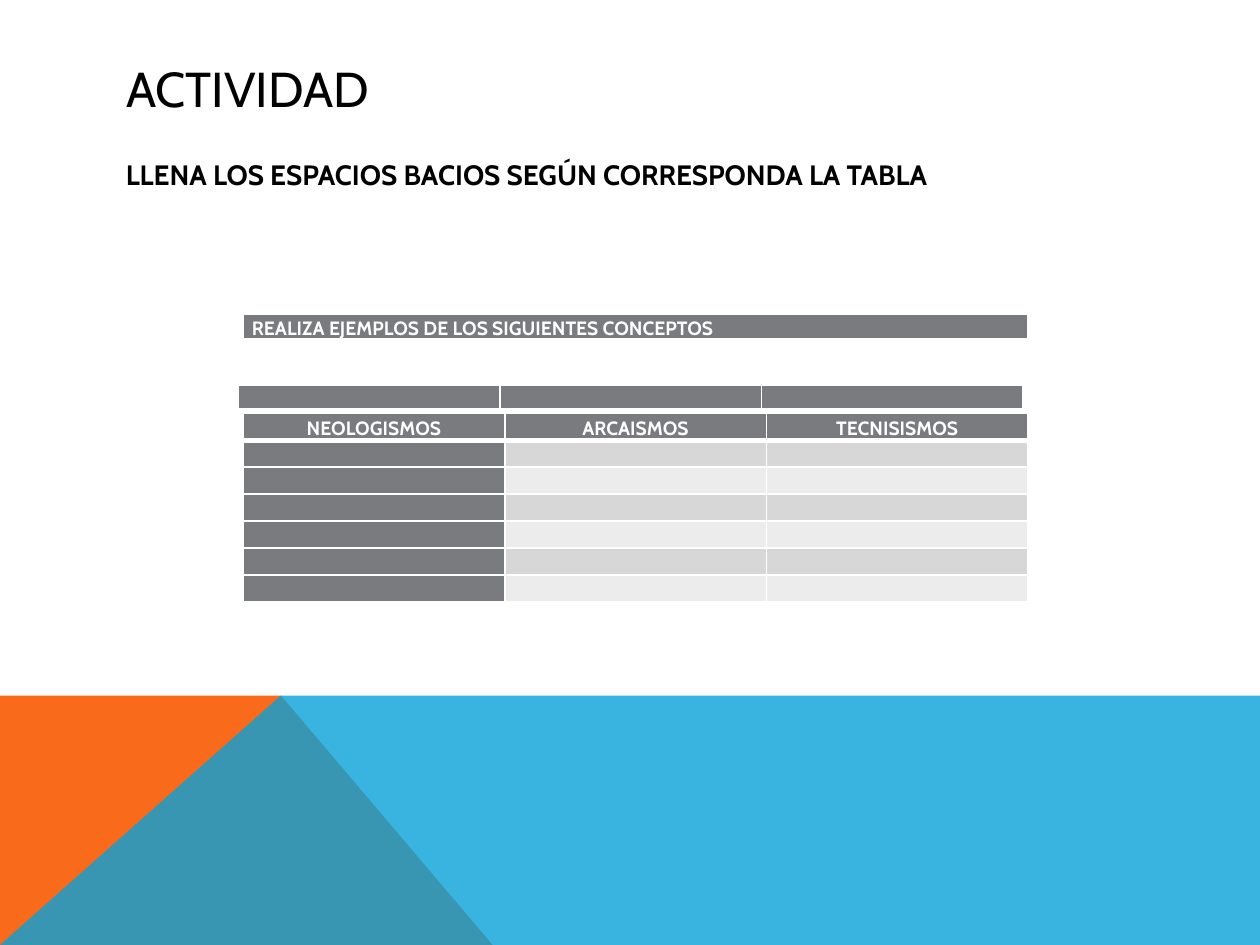
from lxml import etree
from pptx import Presentation
from pptx.dml.color import RGBColor
from pptx.enum.text import MSO_ANCHOR as Anchor, PP_ALIGN as Align
from pptx.oxml.ns import qn
from pptx.util import Inches, Pt

WHITE = RGBColor(0xFF, 0xFF, 0xFF)
BLACK = RGBColor(0, 0, 0)
GRAY = RGBColor(0x79, 0x7B, 0x7E)
BAND = RGBColor(0xD7, 0xD7, 0xD8)
PALE = RGBColor(0xEC, 0xEC, 0xEC)
ORANGE = RGBColor(0xF9, 0x6A, 0x1B)
BLUE = RGBColor(0x08, 0xA1, 0xD9)

HEAD = {"name": "Cabin", "size": Pt(28), "bold": False}
TASK = {"name": "Cabin", "size": Pt(16), "bold": True}
CELL = {"name": "Cabin", "size": Pt(11), "bold": True}


def write(para, text, style, color):
    run = para.add_run()
    run.text = text
    for key, value in style.items():
        setattr(run.font, key, value)
    run.font.color.rgb = color


def place(shape, box):
    for key, value in zip(("left", "top", "width", "height"), box):
        setattr(shape, key, Inches(value))


def add_area(slide, points, color, alpha=100):
    spots = [(Inches(x), Inches(y)) for x, y in points]
    build = slide.shapes.build_freeform(*spots[0], scale=1.0)
    build.add_line_segments(spots[1:], close=True)
    area = build.convert_to_shape()
    area.shadow.inherit = False
    area.fill.solid()
    area.fill.fore_color.rgb = color
    area.line.fill.background()
    if alpha < 100:
        tint = area.fill._xPr.find(".//" + qn("a:srgbClr"))
        etree.SubElement(tint, qn("a:alpha")).set("val", str(alpha * 1000))


def add_base(slide, box):
    """Coloured base with its peak."""
    left, top, width, height = box
    right, low, peak = left + width, top + height, left + 2.23
    add_area(slide, [(left, low), (left, top), (peak, top), (3.91, low)], ORANGE)
    add_area(slide, [(left, low), (peak, top), (right, top), (right, low)], BLUE, 80)


def add_title(slide, box):
    title = slide.shapes.title
    place(title, box)
    frame = title.text_frame
    frame.vertical_anchor = Anchor.MIDDLE
    frame.paragraphs[0].alignment = Align.LEFT
    write(frame.paragraphs[0], "ACTIVIDAD", HEAD, BLACK)


def add_task(slide, box):
    frame = slide.shapes.add_textbox(*map(Inches, box)).text_frame
    frame.word_wrap = True
    para = frame.paragraphs[0]
    para.space_before = Pt(8)
    write(para, "LLENA LOS ESPACIOS BACIOS SEGÚN CORRESPONDA LA TABLA", TASK, BLACK)


def set_edges(cell, low):
    """White borders, the bottom one `low` points wide."""
    props = cell._tc.get_or_add_tcPr()
    for pos, side in enumerate("LRTB"):
        edge = etree.Element(qn("a:ln" + side))
        edge.set("w", str(Pt(low if side == "B" else 1)))
        fill = etree.SubElement(edge, qn("a:solidFill"))
        etree.SubElement(fill, qn("a:srgbClr")).set("val", str(WHITE))
        props.insert(pos, edge)


def fill_cell(cell, text, color, low, align):
    cell.fill.solid()
    cell.fill.fore_color.rgb = color
    set_edges(cell, low)
    cell.margin_left = cell.margin_right = Inches(0.07)
    cell.margin_top = cell.margin_bottom = 0
    para = cell.text_frame.paragraphs[0]
    para.alignment = align
    if text:
        para.line_spacing = 1.15
        write(para, text, CELL, WHITE)
    else:
        # Small type keeps an empty row low
        para._p.get_or_add_endParaRPr().set("sz", "800")


def add_grid(slide, box, heads, blanks=0, align=Align.CENTER):
    """Header row, then banded empty rows with a dark first column."""
    count = blanks + 1
    table = slide.shapes.add_table(count, len(heads), *map(Inches, box)).table
    for row in table.rows:
        row.height = Inches(box[3] / count)
    for i in range(count):
        for j, head in enumerate(heads):
            color = GRAY if i == 0 or j == 0 else (BAND if i % 2 else PALE)
            fill_cell(table.cell(i, j), "" if i else head, color, 1 if i else 3, align)


def main():
    deck = Presentation()
    deck.slide_width, deck.slide_height = Inches(10), Inches(7.5)
    slide = deck.slides.add_slide(deck.slide_layouts[5])
    add_base(slide, (0, 5.52, 10, 1.98))
    add_title(slide, (0.9, 0.4, 8.22, 0.6))
    add_task(slide, (0.9, 1.2, 8.22, 3.91))
    # Tables
    add_grid(slide, (1.89, 3.06, 6.23, 0.2), ["", "", ""])
    add_grid(slide, (1.93, 2.49, 6.23, 0.2),
             ["REALIZA EJEMPLOS DE LOS SIGUIENTES CONCEPTOS"], align=Align.LEFT)
    add_grid(slide, (1.93, 3.28, 6.23, 1.5),
             ["NEOLOGISMOS", "ARCAISMOS", "TECNISISMOS"], blanks=6)
    deck.save("out.pptx")


if __name__ == "__main__":
    main()
